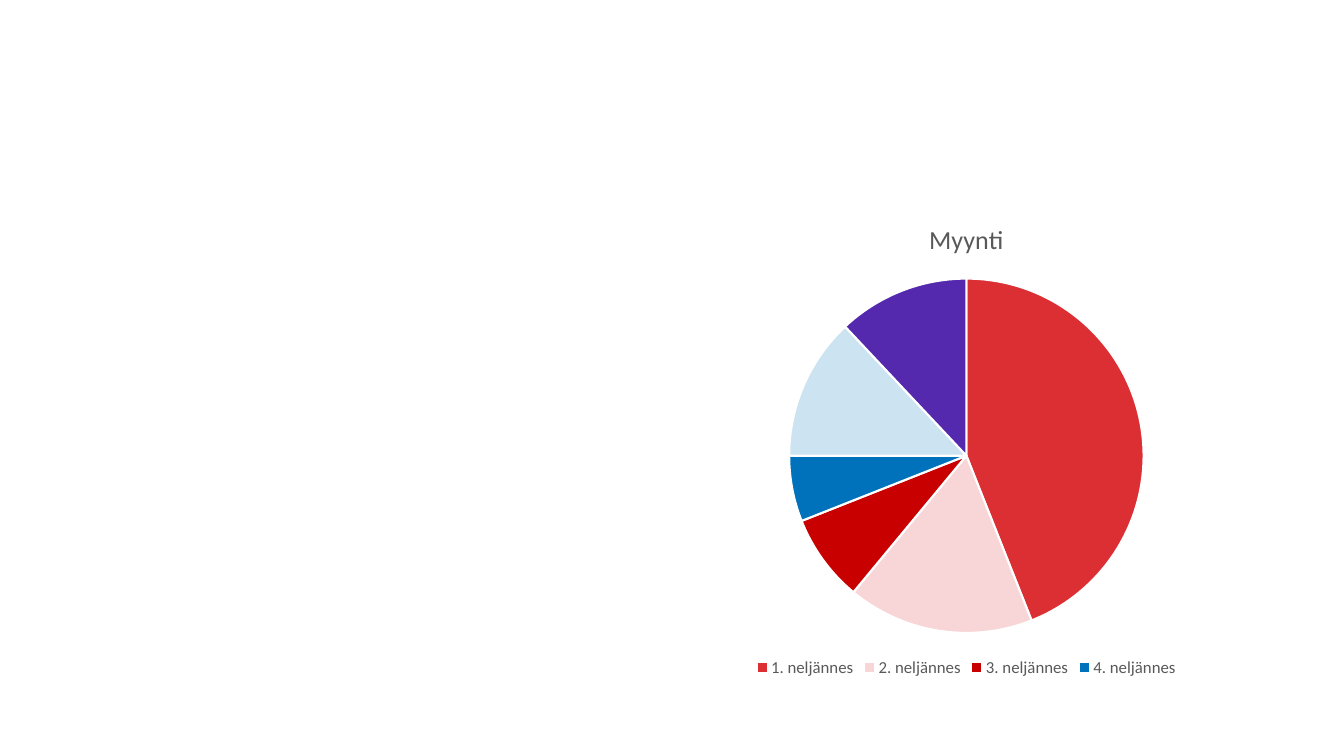
from lxml import etree
from pptx import Presentation
from pptx.chart import data as chart_data
from pptx.chart import point as chart_point
from pptx.dml.color import RGBColor
from pptx.enum import chart as chart_enum
from pptx.oxml import ns
from pptx.util import Inches, Pt

COLORS = {
    "text": "595959",
    "slice_edge": "FFFFFF",
    "red": "DC2F34",
    "pink": "F8D5D6",
    "dark_red": "C90000",
    "blue": "0072BB",
    "pale_blue": "CCE3F1",
    "violet": "5429AD",
}
SLICE_COLORS = ["red", "pink", "dark_red", "blue", "pale_blue", "violet"]
QUARTERS = [f"{number}. neljännes" for number in range(1, 5)]
SALES = [44, 17, 8, 6, 13, 12]
PIE_AREA = {"x": 0.19, "y": 0.16, "w": 0.62, "h": 0.74}


def rgb(name):
    return RGBColor.from_string(COLORS[name])


def format_font(font, size):
    values = {"name": "Calibri", "size": Pt(size), "bold": False}
    for attribute, value in values.items():
        setattr(font, attribute, value)
    font.color.rgb = rgb("text")


def add_element(parent, tag, value=None):
    element = etree.SubElement(parent, ns.qn(f"c:{tag}"))
    if value is not None:
        element.set("val", str(value))
    return element


def place_pie(chart):
    """Fix the pie's place as fractions of the chart frame."""
    plot_area = chart._chartSpace.chart.plotArea
    for old_layout in plot_area.findall(ns.qn("c:layout")):
        plot_area.remove(old_layout)
    layout = add_element(plot_area, "layout")
    plot_area.insert(0, layout)
    manual = add_element(layout, "manualLayout")
    add_element(manual, "layoutTarget", "inner")
    for side in "xy":
        add_element(manual, f"{side}Mode", "edge")
    for side, fraction in PIE_AREA.items():
        add_element(manual, side, fraction)


def format_title(chart, title):
    chart.has_title = True
    frame = chart.chart_title.text_frame
    frame.text = title
    format_font(frame.paragraphs[0].runs[0].font, 18.6)
    chart.chart_title.include_in_layout = False


def format_legend(chart):
    """Show the legend below the pie, with the named slices only."""
    chart.has_legend = True
    legend = chart.legend
    legend.position = chart_enum.XL_LEGEND_POSITION.BOTTOM
    legend.include_in_layout = False
    format_font(legend.font, 12)
    for index in range(len(SALES) - 1, len(QUARTERS) - 1, -1):
        entry = add_element(legend._element, "legendEntry")
        add_element(entry, "idx", index)
        add_element(entry, "delete", 1)
        legend._element.insert(1, entry)


def color_slices(series):
    """Color every slice; series.points stops at the last named one."""
    for index, color in enumerate(SLICE_COLORS):
        slice_format = chart_point.Point(series._element, index).format
        slice_format.fill.solid()
        slice_format.fill.fore_color.rgb = rgb(color)
        slice_format.line.color.rgb = rgb("slice_edge")
        slice_format.line.width = Pt(1.5)


def add_sales_pie(slide):
    sales = chart_data.CategoryChartData()
    sales.categories = QUARTERS
    sales.add_series("Myynti", SALES)
    chart = slide.shapes.add_chart(
        chart_enum.XL_CHART_TYPE.PIE,
        Inches(6.75), Inches(2), Inches(5.67), Inches(4.76), sales,
    ).chart
    format_font(chart.font, 10)
    format_title(chart, "Myynti")
    format_legend(chart)
    chart.plots[0].vary_by_categories = True
    color_slices(chart.plots[0].series[0])
    place_pie(chart)


def main():
    presentation = Presentation()
    presentation.slide_width = Inches(13.33)
    presentation.slide_height = Inches(7.5)
    slide = presentation.slides.add_slide(presentation.slide_layouts[6])
    add_sales_pie(slide)
    presentation.save("out.pptx")


if __name__ == "__main__":
    main()
